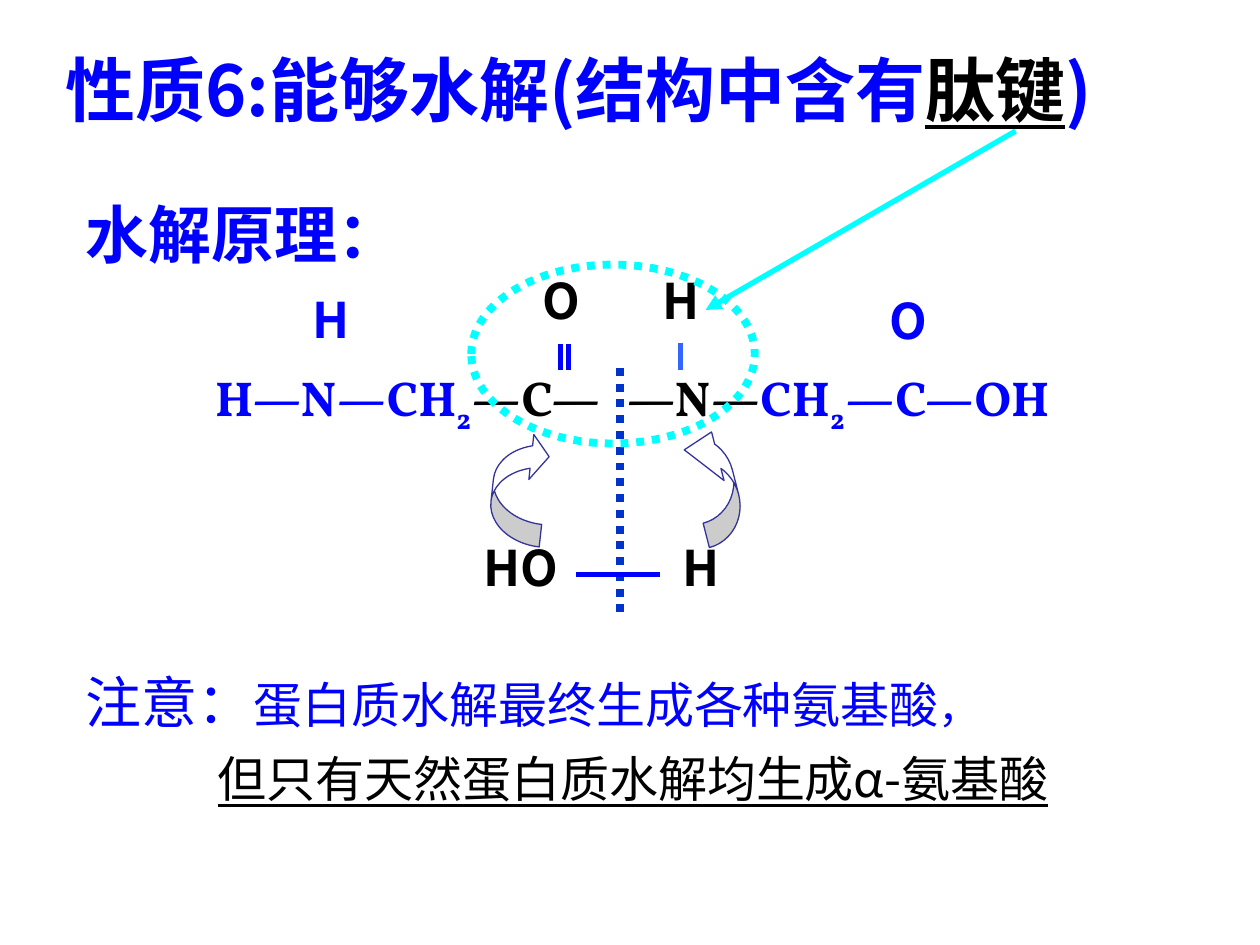
from typing import NamedTuple

from lxml.etree import SubElement
from pptx import Presentation
from pptx.dml.color import RGBColor
from pptx.enum.dml import MSO_LINE
from pptx.enum.shapes import MSO_CONNECTOR, MSO_SHAPE
from pptx.enum.text import MSO_ANCHOR, MSO_AUTO_SIZE, PP_ALIGN
from pptx.oxml.ns import qn
from pptx.util import Inches, Pt

COLORS = {"blue": "0000FF", "black": "000000", "cyan": "00FFFF",
          "royal": "0033CC", "sky": "3366FF", "navy": "333399",
          "white": "FFFFFF"}
SANS, ROMAN, SERIF = "Noto Sans CJK SC", "Times New Roman", "Vollkorn"
COLS, ROWS = 100, 75
WIDE, HIGH = Inches(10), Inches(7.5)


class Box(NamedTuple):
    col: float
    row: float
    cols: float
    rows: float


class Run(NamedTuple):
    text: str
    color: str = "blue"
    size: float = 28
    font: str = SANS
    bold: bool = True
    under: bool = False
    base: int = 0


class Atom(NamedTuple):
    text: str
    box: Box
    color: str = "black"


class Bond(NamedTuple):
    start: tuple[float, float]
    end: tuple[float, float]
    color: str = "blue"
    width: float = 3
    dotted: bool = False
    arrow: bool = False


class Arc(NamedTuple):
    kind: MSO_SHAPE
    box: Box
    turn: float
    adjust: tuple[float, ...]


def across(cols: float) -> int:
    return round(WIDE * cols / COLS)


def down(rows: float) -> int:
    return round(HIGH * rows / ROWS)


def place(box: Box) -> tuple[int, int, int, int]:
    return across(box.col), down(box.row), across(box.cols), down(box.rows)


def tint(name: str) -> RGBColor:
    return RGBColor.from_string(COLORS[name])


def write(shape, *paras: list[Run], wrap: bool = True, lead: float = 1,
          gap: float = 0, indent: float = 0) -> None:
    """Fill a shape with paragraphs; lead is for the first, the rest for later ones."""
    frame = shape.text_frame
    frame.word_wrap = wrap
    frame.auto_size = MSO_AUTO_SIZE.SHAPE_TO_FIT_TEXT
    frame.vertical_anchor = MSO_ANCHOR.TOP
    for i, runs in enumerate(paras):
        para = frame.add_paragraph() if i else frame.paragraphs[0]
        para.alignment = PP_ALIGN.LEFT
        para.line_spacing = 1.0 if i else lead
        para.space_before = Pt(gap if i else 0)
        if i and indent:
            para._p.get_or_add_pPr().set("marL", str(across(indent)))
        for item in runs:
            run = para.add_run()
            run.text = item.text
            font = run.font
            font.name, font.size = item.font, Pt(item.size)
            font.bold, font.underline = item.bold, item.under
            font.color.rgb = tint(item.color)
            props = run._r.get_or_add_rPr()
            SubElement(props, qn("a:ea")).set("typeface", SANS)
            if item.base:
                props.set("baseline", str(item.base * 1000))


def label(slide, box: Box, *paras: list[Run], **style) -> None:
    write(slide.shapes.add_textbox(*place(box)), *paras, **style)


def join(slide, bond: Bond) -> None:
    (x1, y1), (x2, y2) = bond.start, bond.end
    line = slide.shapes.add_connector(MSO_CONNECTOR.STRAIGHT, across(x1),
                                      down(y1), across(x2), down(y2))
    line.line.color.rgb = tint(bond.color)
    line.line.width = Pt(bond.width)
    if bond.dotted:
        line.line.dash_style = MSO_LINE.ROUND_DOT
    if bond.arrow:
        SubElement(line.line._get_or_add_ln(), qn("a:tailEnd")).set("type", "triangle")
    SubElement(line._element.spPr, qn("a:effectLst"))


def outline(slide, kind: MSO_SHAPE, box: Box, color: str, width: float):
    shape = slide.shapes.add_shape(kind, *place(box))
    shape.shadow.inherit = False
    shape.line.color.rgb = tint(color)
    shape.line.width = Pt(width)
    return shape


def bend(slide, arc: Arc) -> None:
    shape = outline(slide, arc.kind, arc.box, "navy", 0.75)
    shape.fill.solid()
    shape.fill.fore_color.rgb = tint("white")
    shape.rotation = arc.turn
    for i, value in enumerate(arc.adjust):
        shape.adjustments[i] = value


ARCS = [
    Arc(MSO_SHAPE.CURVED_RIGHT_ARROW, Box(55, 33.2, 3.3, 10), 165.6,
        (0.604, 1.208, 0.742)),
    Arc(MSO_SHAPE.CURVED_DOWN_ARROW, Box(36.7, 36.6, 9, 4.2), 276.3,
        (0.427, 0.854, 0.333)),
]
ATOMS = [
    Atom("H", Box(23.8, 22.5, 5.6, 5.7), "blue"),
    Atom("O", Box(42.1, 21, 7.2, 5.7)),
    Atom("H", Box(51.6, 21, 5.6, 5.7)),
    Atom("O", Box(69.6, 22.6, 7.2, 5.7), "blue"),
    Atom("HO", Box(37.4, 42.2, 11.3, 5.7)),
    Atom("H", Box(53.2, 42.2, 6.1, 5.7)),
]
BONDS = [
    Bond((49.2, 29.2), (49.2, 49.2), "royal", 4.5, dotted=True),
    *(Bond((x, 27.3), (x, 29.4)) for x in (44.5, 45.1)),
    Bond((54, 27.2), (54, 29.4), "sky"),
    Bond((45.7, 45.6), (52.4, 45.6)),
]


def main() -> None:
    deck = Presentation()
    deck.slide_width, deck.slide_height = WIDE, HIGH
    slide = deck.slides.add_slide(deck.slide_layouts[5])

    # Title and heading
    title = slide.shapes.title
    title.left, title.top, title.width, title.height = place(Box(4.2, 3.2, 93.3, 7.7))
    write(title, [Run("性质6:能够水解(结构中含有", size=40),
                  Run("肽键", "black", 40, under=True), Run(")", size=40)])
    label(slide, Box(5.8, 15, 33.1, 7), [Run("水解原理：", size=36, font=ROMAN)])

    # Closing note
    label(slide, Box(5.8, 49.3, 87.5, 16.5),
          [Run("注意：", size=32, font=ROMAN, bold=False),
           Run("蛋白质水解最终生成各种氨基酸", font=ROMAN, bold=False),
           Run("，", size=24, font=ROMAN, bold=False)],
          [Run("但只有天然蛋白质水解均生成α-氨基酸", "black", bold=False, under=True)],
          lead=1.6, gap=8, indent=10.5)

    # Peptide chain, split at the bond that breaks
    two = Run("2", font=SERIF, base=-25)
    label(slide, Box(16.1, 28.7, 34.3, 5.7),
          [Run("H—N—CH", font=SERIF), two, Run("—C—", "black", font=SERIF)],
          wrap=False)
    label(slide, Box(48.7, 28.7, 37.5, 5.7),
          [Run("—N—", "black", font=SERIF), Run("CH", font=SERIF), two,
           Run("—C—OH", font=SERIF)], wrap=False)

    # Water attack, atoms and bonds
    for arc in ARCS:
        bend(slide, arc)
    for bond in BONDS:
        join(slide, bond)
    for atom in ATOMS:
        label(slide, atom.box, [Run(atom.text, atom.color)])

    # Ring round the peptide bond, with its pointer
    ring = outline(slide, MSO_SHAPE.OVAL, Box(37.4, 21, 22.5, 14.2), "cyan", 4.5)
    ring.fill.background()
    ring.line.dash_style = MSO_LINE.ROUND_DOT
    join(slide, Bond((80.6, 10.4), (56, 24.6), "cyan", arrow=True))

    deck.save("out.pptx")


if __name__ == "__main__":
    main()
